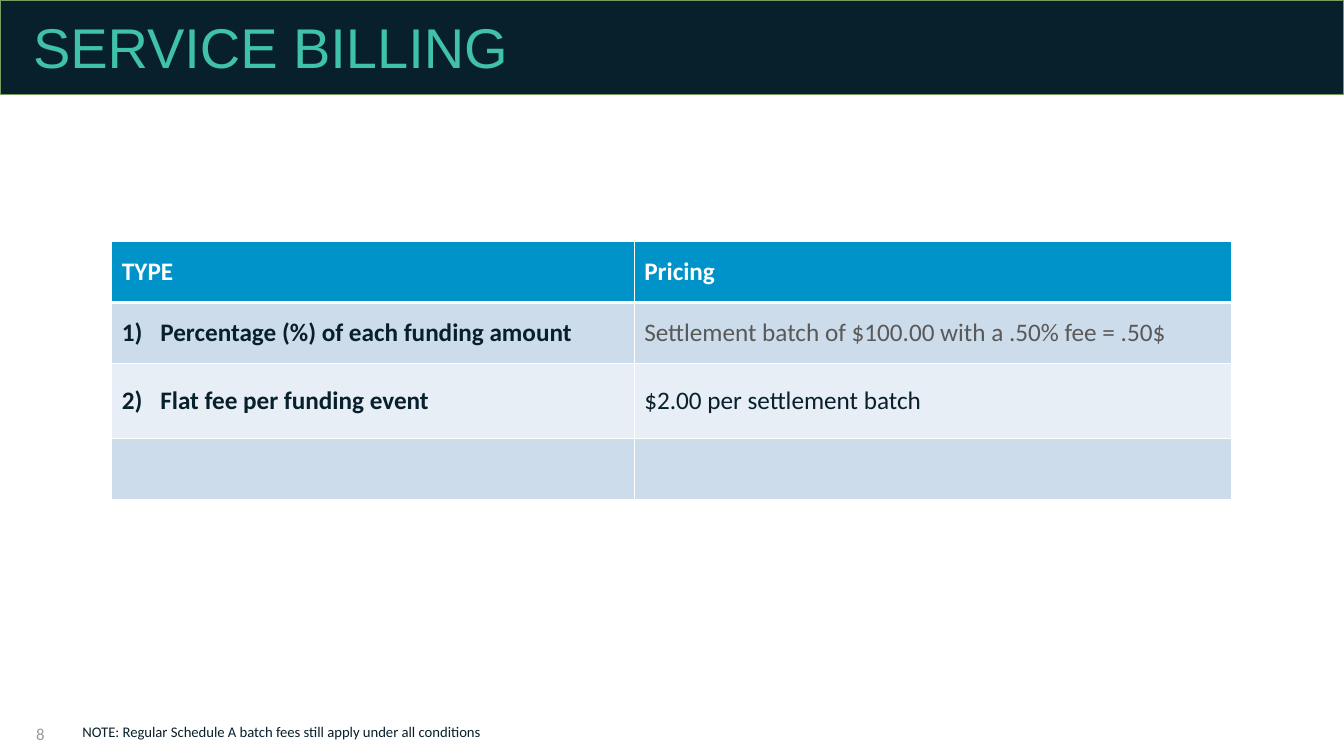
from dataclasses import dataclass

from lxml.etree import SubElement
from pptx import Presentation
from pptx.dml.color import RGBColor
from pptx.enum.shapes import MSO_SHAPE
from pptx.enum.text import MSO_ANCHOR
from pptx.oxml import parse_xml
from pptx.oxml.ns import nsdecls, qn
from pptx.util import Inches, Pt


@dataclass(frozen=True)
class Theme:
    navy: str = "081F2C"
    green: str = "779E61"
    teal: str = "40C1AC"
    blue: str = "0093C9"
    white: str = "FFFFFF"
    grey: str = "595959"
    pale_grey: str = "9B9B9B"
    bands: tuple = ("CCDCEB", "E7EEF5")
    heading_font: str = "Arial"
    body_font: str = "Calibri"
    title_size: float = 40
    table_size: float = 18
    number_size: float = 12
    note_size: float = 10.5


THEME = Theme()


def paint(target, color):
    target.solid()
    target.fore_color.rgb = RGBColor.from_string(color)


def write(para, text, size, color, font=THEME.body_font, bold=False):
    span = para.add_run()
    span.text = text
    formats = {"size": Pt(size), "name": font, "bold": bold}
    for name, value in formats.items():
        setattr(span.font, name, value)
    span.font.color.rgb = RGBColor.from_string(color)


def add_text(page, left, top, width, height, wrap=True, anchor=MSO_ANCHOR.TOP):
    """Add a text box and return its first paragraph."""
    box = page.shapes.add_textbox(*map(Inches, (left, top, width, height)))
    box.text_frame.word_wrap = wrap
    box.text_frame.vertical_anchor = anchor
    return box.text_frame.paragraphs[0]


def add_header(page, left, top, width, height, title):
    band = page.shapes.add_shape(
        MSO_SHAPE.RECTANGLE, *map(Inches, (left, top, width, height)))
    band.shadow.inherit = False
    paint(band.fill, THEME.navy)
    paint(band.line.fill, THEME.green)
    band.line.width = Pt(1)
    para = add_text(page, left + 0.23, top + 0.15, width - 0.54, height - 0.16)
    para.line_spacing = 0.9
    write(para, title, THEME.title_size, THEME.teal, THEME.heading_font)


def number_paragraph(para, start):
    properties = para._p.get_or_add_pPr()
    properties.set("marL", str(Inches(0.38)))
    properties.set("indent", str(Inches(-0.38)))
    SubElement(properties, qn("a:buFont"), typeface="+mj-lt")
    SubElement(properties, qn("a:buAutoNum"),
               type="arabicParenR", startAt=str(start))


def set_borders(cell, widths):
    properties = cell._tc.get_or_add_tcPr()
    for position, (side, width) in enumerate(widths.items()):
        properties.insert(position, parse_xml(
            f'<a:ln{side} {nsdecls("a")} w="{Pt(width)}"><a:solidFill>'
            f'<a:srgbClr val="{THEME.white}"/></a:solidFill></a:ln{side}>'))


def add_pricing_table(page, left, top, column_widths, row_heights, rows):
    """Rows hold one (text, color, bold) entry per column."""
    size = sum(column_widths), sum(row_heights)
    frame = page.shapes.add_table(
        len(row_heights), len(column_widths), *map(Inches, (left, top, *size)))
    table = frame.table
    for column, width in zip(table.columns, column_widths):
        column.width = Inches(width)
    for row_index, (row, height) in enumerate(zip(table.rows, row_heights)):
        row.height = Inches(height)
        fill = THEME.bands[(row_index - 1) % 2] if row_index else THEME.blue
        for column_index, (text, color, bold) in enumerate(rows[row_index]):
            cell = row.cells[column_index]
            cell.vertical_anchor = MSO_ANCHOR.MIDDLE
            paint(cell.fill, fill)
            set_borders(cell, {"L": 1, "R": 1,
                               "T": 3 if row_index == 1 else 1,
                               "B": 3 if row_index == 0 else 1})
            para = cell.text_frame.paragraphs[0]
            if text:
                if row_index and column_index == 0:
                    number_paragraph(para, row_index)
                write(para, text, THEME.table_size, color, bold=bold)


def add_footer(page, left, top, number, note):
    para = add_text(page, left, top, 3, 0.4, anchor=MSO_ANCHOR.BOTTOM)
    write(para, number, THEME.number_size, THEME.pale_grey)
    para = add_text(page, left + 0.46, top + 0.09, 4.53, 0.28, wrap=False)
    write(para, note, THEME.note_size, THEME.navy)


def main():
    deck = Presentation()
    deck.slide_width, deck.slide_height = Inches(13.33), Inches(7.5)
    page = deck.slides.add_slide(deck.slide_layouts[6])
    add_header(page, 0, 0, 13.33, 0.94, "SERVICE BILLING")
    empty = ("", THEME.navy, False)
    rows = [
        [("TYPE", THEME.white, True), ("Pricing", THEME.white, True)],
        [("Percentage (%) of each funding amount", THEME.navy, True),
         ("Settlement batch of $100.00 with a .50% fee = .50$",
          THEME.grey, False)],
        [("Flat fee per funding event", THEME.navy, True),
         ("$2.00 per settlement batch", THEME.navy, False)],
        [empty, empty],
    ]
    add_pricing_table(page, 1.11, 2.39, (5.18, 5.93),
                      (0.61, 0.61, 0.74, 0.61), rows)
    add_footer(page, 0.26, 7.03, "8",
               "NOTE: Regular Schedule A batch fees still apply "
               "under all conditions")
    deck.save("out.pptx")


if __name__ == "__main__":
    main()
